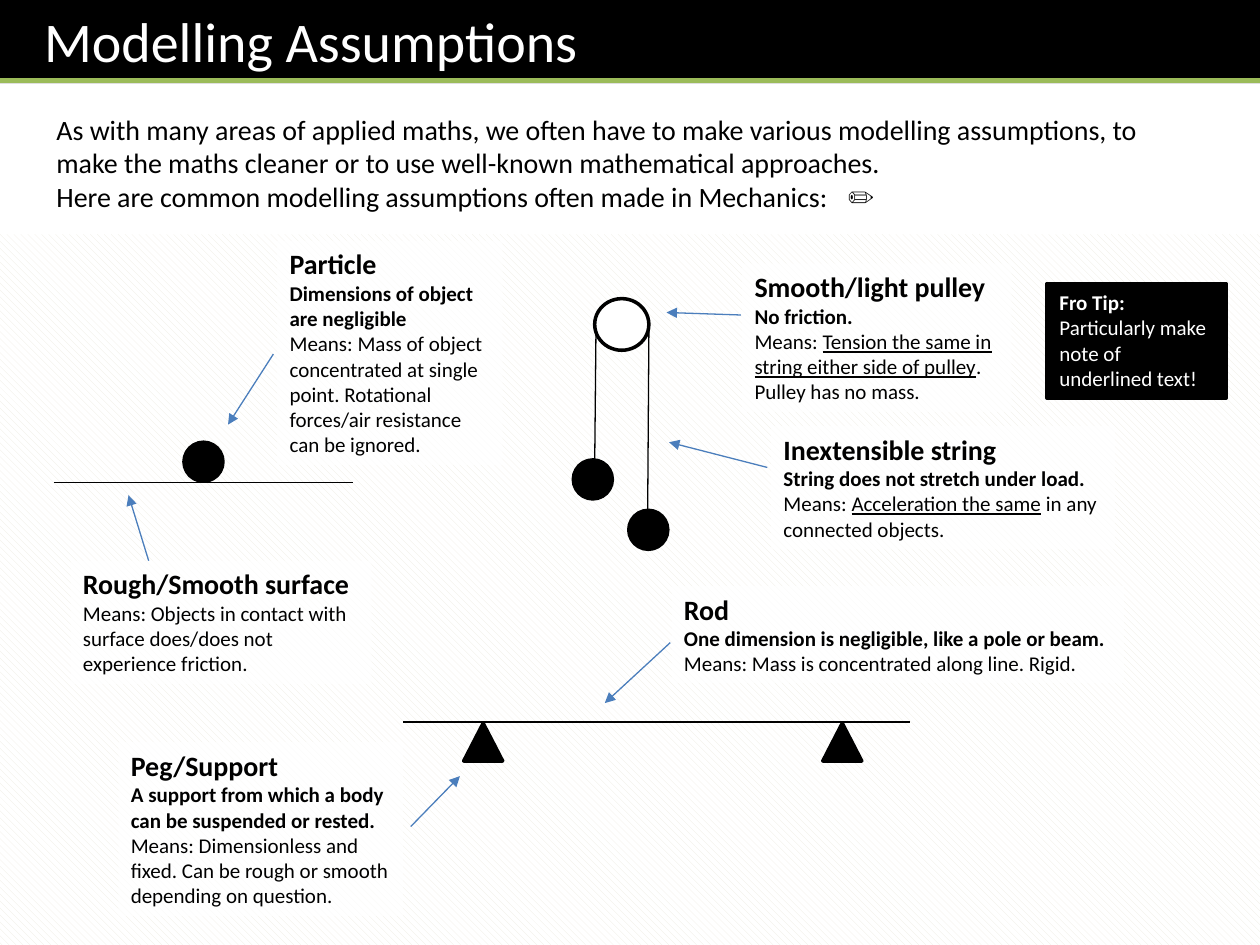
"""Build the slide on modelling assumptions in mechanics."""
from lxml.etree import SubElement
from pptx import Presentation
from pptx.dml.color import RGBColor
from pptx.enum.dml import MSO_PATTERN
from pptx.enum.shapes import MSO_CONNECTOR, MSO_SHAPE
from pptx.enum.text import MSO_ANCHOR, MSO_AUTO_SIZE, PP_ALIGN
from pptx.oxml.ns import qn
from pptx.util import Inches, Pt

COLOURS = {
    "black": "000000",
    "white": "FFFFFF",
    "green": "9BBB59",
    "blue": "4B7EBC",
    "cream": "EEECE1",
}
COLOURS = {name: RGBColor.from_string(value) for name, value in COLOURS.items()}

deck = Presentation()
deck.slide_width, deck.slide_height = Inches(10), Inches(7.5)
page = deck.slides.add_slide(deck.slide_layouts[6])


def add_box(place, paragraphs=(), kind=MSO_SHAPE.RECTANGLE, fill="black", outline=0, colour="white"):
    """Add a shape whose runs are (text, size, style), with b for bold and u for underline."""
    box = page.shapes.add_shape(kind, *map(Inches, place))
    box.shadow.inherit = False
    if fill:
        box.fill.solid()
        box.fill.fore_color.rgb = COLOURS[fill]
    else:
        box.fill.background()
    if outline:
        box.line.color.rgb = COLOURS["black"]
        box.line.width = Pt(outline)
    else:
        box.line.fill.background()
    frame = box.text_frame
    frame.word_wrap = True
    frame.vertical_anchor = MSO_ANCHOR.TOP
    if paragraphs:
        frame.auto_size = MSO_AUTO_SIZE.SHAPE_TO_FIT_TEXT
    for index, runs in enumerate(paragraphs):
        para = frame.paragraphs[0] if index == 0 else frame.add_paragraph()
        para.alignment = PP_ALIGN.LEFT
        for text, size, style in runs:
            span = para.add_run()
            span.text = text
            span.font.name = "Calibri"
            span.font.size = Pt(size)
            span.font.bold = "b" in style
            span.font.underline = "u" in style
            span.font.color.rgb = COLOURS[colour]
    return box


def add_line(start_x, start_y, end_x, end_y, colour="black", width=0.75, arrow=False):
    """Add a straight line, with an arrowhead at its end if asked."""
    ends = map(Inches, (start_x, start_y, end_x, end_y))
    line = page.shapes.add_connector(MSO_CONNECTOR.STRAIGHT, *ends)
    line.line.color.rgb = COLOURS[colour]
    line.line.width = Pt(width)
    if arrow:
        SubElement(line.line._get_or_add_ln(), qn("a:tailEnd"), type="triangle")
    SubElement(line._element.spPr, qn("a:effectLst"))


title = add_box((0, 0, 10, 0.66), [[("Modelling Assumptions", 32, "")]])
title.text_frame.margin_left = Inches(0.35)
add_line(0, 0.64, 10, 0.64, "green", 3)

intro = add_box((0.35, 0.84, 9.13, 0.91), [
    [("As with many areas of applied maths, we often have to make various modelling assumptions, "
      "to make the maths cleaner or to use well-known mathematical approaches.", 16, "")],
    [("Here are common modelling assumptions often made in Mechanics:\t", 16, ""), ("✏", 16, "")],
], fill=None, colour="black")
last_line = intro.text_frame.paragraphs[1]
tabs = SubElement(last_line._p.get_or_add_pPr(), qn("a:tabLst"))
SubElement(tabs, qn("a:tab"), pos=str(Inches(6.28)), algn="l")
last_line.runs[1].font.name = "Arial"

backdrop = add_box((0, 1.86, 10, 5.64))
backdrop.fill.patterned()
backdrop.fill.pattern = MSO_PATTERN.WIDE_DOWNWARD_DIAGONAL
backdrop.fill.fore_color.rgb = COLOURS["cream"]
backdrop.fill.back_color.rgb = COLOURS["white"]

labels = [
    ((2.2, 1.91, 1.79, 1.78), "Particle", [
        [("Dimensions of object are negligible", 12, "b")],
        [("Means: Mass of object concentrated at single point. "
          "Rotational forces/air resistance can be ignored.", 12, "")],
    ]),
    ((0.56, 4.45, 2.39, 0.98), "Rough/Smooth surface", [
        [("Means: Objects in contact with surface does/does not experience friction.", 12, "")],
    ]),
    ((5.89, 2.09, 2.14, 1.18), "Smooth/light pulley", [
        [("No friction.", 12, "b")],
        [("Means: ", 12, ""), ("Tension the same in string either side of pulley", 12, "u"), (".", 12, "")],
        [("Pulley has no mass.", 12, "")],
    ]),
    ((6.12, 3.38, 2.73, 0.98), "Inextensible string", [
        [("String does not stretch under load.", 12, "b")],
        [("Means: ", 12, ""), ("Acceleration the same", 12, "u"), (" in any connected objects.", 12, "")],
    ]),
    ((5.33, 4.65, 3.59, 0.77), "Rod", [
        [("One dimension is negligible, like a pole or beam.", 12, "b")],
        [("Means: Mass is concentrated along line. Rigid.", 12, "")],
    ]),
    ((0.94, 5.89, 2.26, 1.38), "Peg/Support", [
        [("A support from which a body can be suspended or rested.", 12, "b")],
        [("Means: Dimensionless and fixed. Can be rough or smooth depending on question.", 12, "")],
    ]),
]
for place, heading, details in labels:
    label = add_box(place, [[(heading, 16, "b")], *details], fill="white", colour="black")
    fill_colour = label._element.spPr.find(qn("a:solidFill"))[0]
    SubElement(fill_colour, qn("a:alpha"), val="72000")

for left, top in [(1.46, 3.51), (4.55, 3.65), (4.99, 4.05)]:
    add_box((left, top, 0.31, 0.31), kind=MSO_SHAPE.OVAL, outline=2)
add_box((4.72, 2.37, 0.43, 0.41), kind=MSO_SHAPE.OVAL, fill="white", outline=2)
for left in (3.68, 6.53):
    add_box((left, 5.74, 0.31, 0.3), kind=MSO_SHAPE.ISOSCELES_TRIANGLE, outline=2)

surface = (0.43, 3.83, 2.8, 3.83)
left_string = (4.73, 2.63, 4.72, 3.7)
right_string = (5.15, 2.63, 5.14, 4.13)
rod = (3.2, 5.73, 7.22, 5.73)
for ends in (surface, left_string, right_string, rod):
    add_line(*ends)

arrows = [
    (2.17, 2.81, 1.81, 3.37),
    (1.18, 4.45, 1.02, 3.93),
    (5.88, 2.5, 5.29, 2.48),
    (6.09, 3.71, 5.31, 3.51),
    (5.32, 5.1, 4.8, 5.58),
    (3.26, 6.56, 3.65, 6.16),
]
for ends in arrows:
    add_line(*ends, colour="blue", arrow=True)

add_box((8.31, 2.25, 1.42, 0.91), [
    [("Fro Tip:", 12, "b"), (" Particularly make note of underlined text!", 12, "")],
], outline=2)

deck.save("out.pptx")
